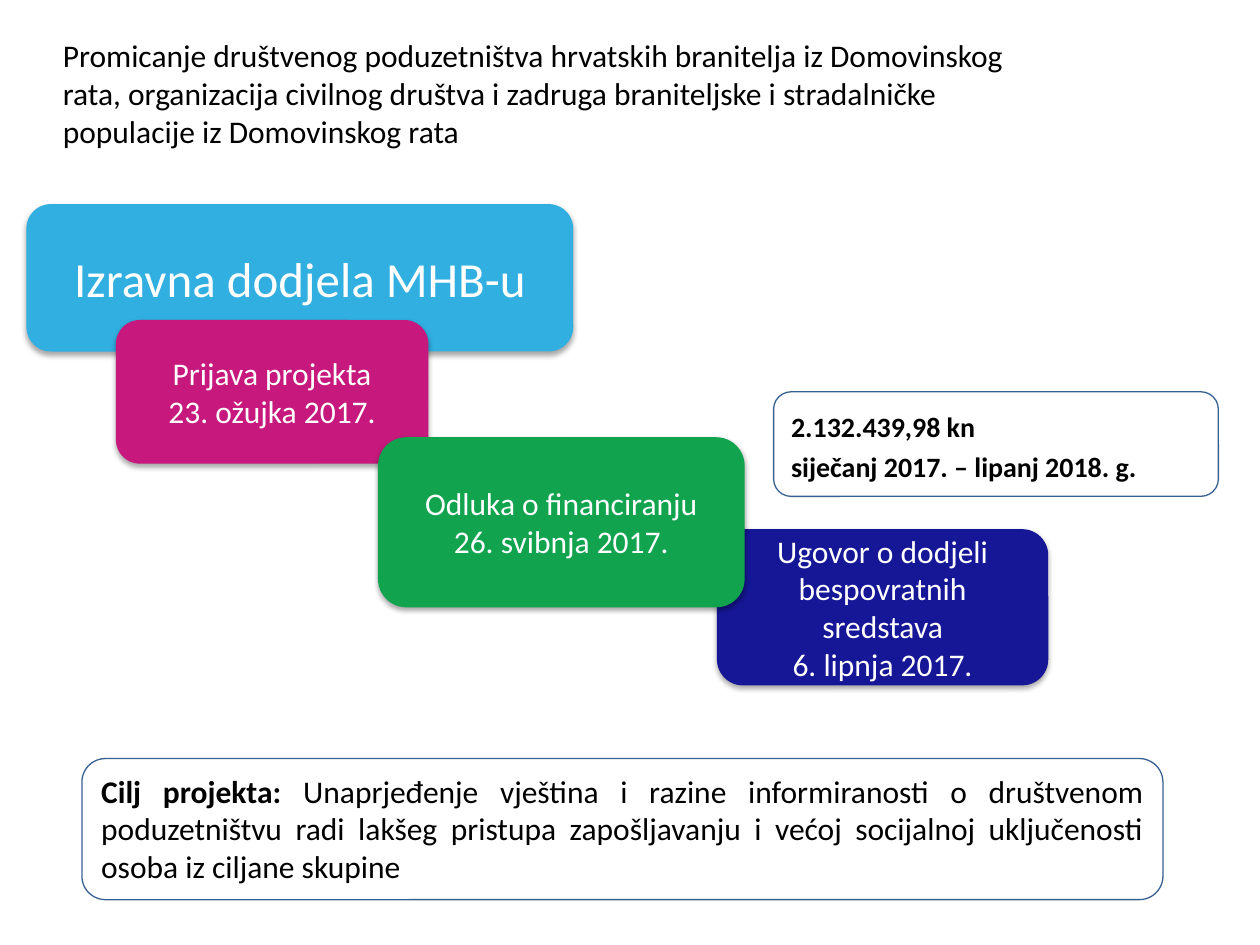
from lxml import etree
from pptx import Presentation
from pptx.dml.color import RGBColor
from pptx.enum.shapes import MSO_SHAPE as Shape
from pptx.enum.text import MSO_ANCHOR as Anchor, MSO_AUTO_SIZE as AutoSize, PP_ALIGN as Align
from pptx.oxml.ns import qn
from pptx.util import Inches, Pt

COLUMNS, ROWS = 100, 75
SLIDE_WIDTH, SLIDE_HEIGHT = Inches(10), Inches(7.5)
FONT = "Calibri"
BLACK = RGBColor(0x00, 0x00, 0x00)
WHITE = RGBColor(0xFF, 0xFF, 0xFF)
BLUE = RGBColor(0x31, 0xAF, 0xE1)
MAGENTA = RGBColor(0xC7, 0x19, 0x7D)
GREEN = RGBColor(0x12, 0xA3, 0x4F)
NAVY = RGBColor(0x16, 0x17, 0x96)
OUTLINE = RGBColor(0x37, 0x60, 0x92)

TITLE = (
    "Promicanje društvenog poduzetništva hrvatskih branitelja iz Domovinskog rata, "
    "organizacija civilnog društva i zadruga braniteljske i stradalničke populacije "
    "iz Domovinskog rata"
)
GOAL = (
    "Unaprjeđenje vještina i razine informiranosti o društvenom poduzetništvu radi "
    "lakšeg pristupa zapošljavanju i većoj socijalnoj uključenosti osoba iz ciljane skupine"
)
STEPS = [
    ((2.1, 16.2, 43.4, 11.7), BLUE, 28, "Izravna dodjela MHB-u"),
    ((9.2, 25.4, 24.8, 11.4), MAGENTA, 18, "Prijava projekta\n23. ožujka 2017."),
    ((56.9, 42, 26.3, 12.4), NAVY, 18,
     "Ugovor o dodjeli bespovratnih sredstava\n6. lipnja 2017."),
    ((30, 34.7, 29.1, 13.5), GREEN, 18, "Odluka o financiranju\n26. svibnja 2017."),
]


def place(column, row, columns, rows):
    return (
        int(SLIDE_WIDTH * column / COLUMNS),
        int(SLIDE_HEIGHT * row / ROWS),
        int(SLIDE_WIDTH * columns / COLUMNS),
        int(SLIDE_HEIGHT * rows / ROWS),
    )


def format_text(text_frame, size, color, align, anchor, bold=False):
    text_frame.word_wrap = True
    text_frame.vertical_anchor = anchor
    for paragraph in text_frame.paragraphs:
        paragraph.alignment = align
        for run in paragraph.runs:
            run.font.name = FONT
            run.font.size = Pt(size)
            run.font.bold = bold
            run.font.color.rgb = color


def add_shadow(shape):
    effects = shape._element.spPr.find(qn("a:effectLst"))
    shadow = etree.SubElement(
        effects, qn("a:outerShdw"), blurRad=str(Pt(3.1)), dist=str(Pt(1.8)),
        dir="5400000", rotWithShape="0",
    )
    color = etree.SubElement(shadow, qn("a:srgbClr"), val=str(BLACK))
    etree.SubElement(color, qn("a:alpha"), val="35000")


def add_rounded_box(slide, area):
    shape = slide.shapes.add_shape(Shape.ROUNDED_RECTANGLE, *place(*area))
    shape.shadow.inherit = False
    return shape


def add_step(slide, area, color, size, text):
    shape = add_rounded_box(slide, area)
    shape.fill.solid()
    shape.fill.fore_color.rgb = color
    shape.line.fill.background()
    add_shadow(shape)
    shape.text_frame.text = text
    format_text(shape.text_frame, size, WHITE, Align.CENTER, Anchor.MIDDLE)


def add_note(slide, area, text, size):
    shape = add_rounded_box(slide, area)
    shape.fill.background()
    shape.line.color.rgb = OUTLINE
    shape.line.width = Pt(0.75)
    text_frame = shape.text_frame
    text_frame.text = text
    text_frame.auto_size = AutoSize.SHAPE_TO_FIT_TEXT
    format_text(text_frame, size, BLACK, Align.JUSTIFY, Anchor.TOP, bold=True)
    return text_frame


def add_title(slide):
    text_frame = slide.shapes.add_textbox(*place(4, 1.1, 79.1, 12.5)).text_frame
    text_frame.text = TITLE
    format_text(text_frame, 18, BLACK, Align.LEFT, Anchor.MIDDLE)


def add_goal(slide):
    text_frame = add_note(slide, (6.5, 60.2, 85.8, 11.2), "Cilj projekta: ", 18)
    run = text_frame.paragraphs[0].add_run()
    run.text = GOAL
    run.font.name = FONT
    run.font.size = Pt(18)
    run.font.bold = False
    run.font.color.rgb = BLACK


def add_budget(slide):
    text = "2.132.439,98 kn\nsiječanj 2017. – lipanj 2018. g."
    text_frame = add_note(slide, (61.4, 31.1, 35.3, 8.3), text, 16)
    for paragraph in text_frame.paragraphs:
        paragraph.line_spacing = Pt(23)


def main():
    presentation = Presentation()
    presentation.slide_width, presentation.slide_height = SLIDE_WIDTH, SLIDE_HEIGHT
    slide = presentation.slides.add_slide(presentation.slide_layouts[6])
    add_title(slide)
    for step in STEPS:
        add_step(slide, *step)
    add_goal(slide)
    add_budget(slide)
    presentation.save("out.pptx")


if __name__ == "__main__":
    main()
